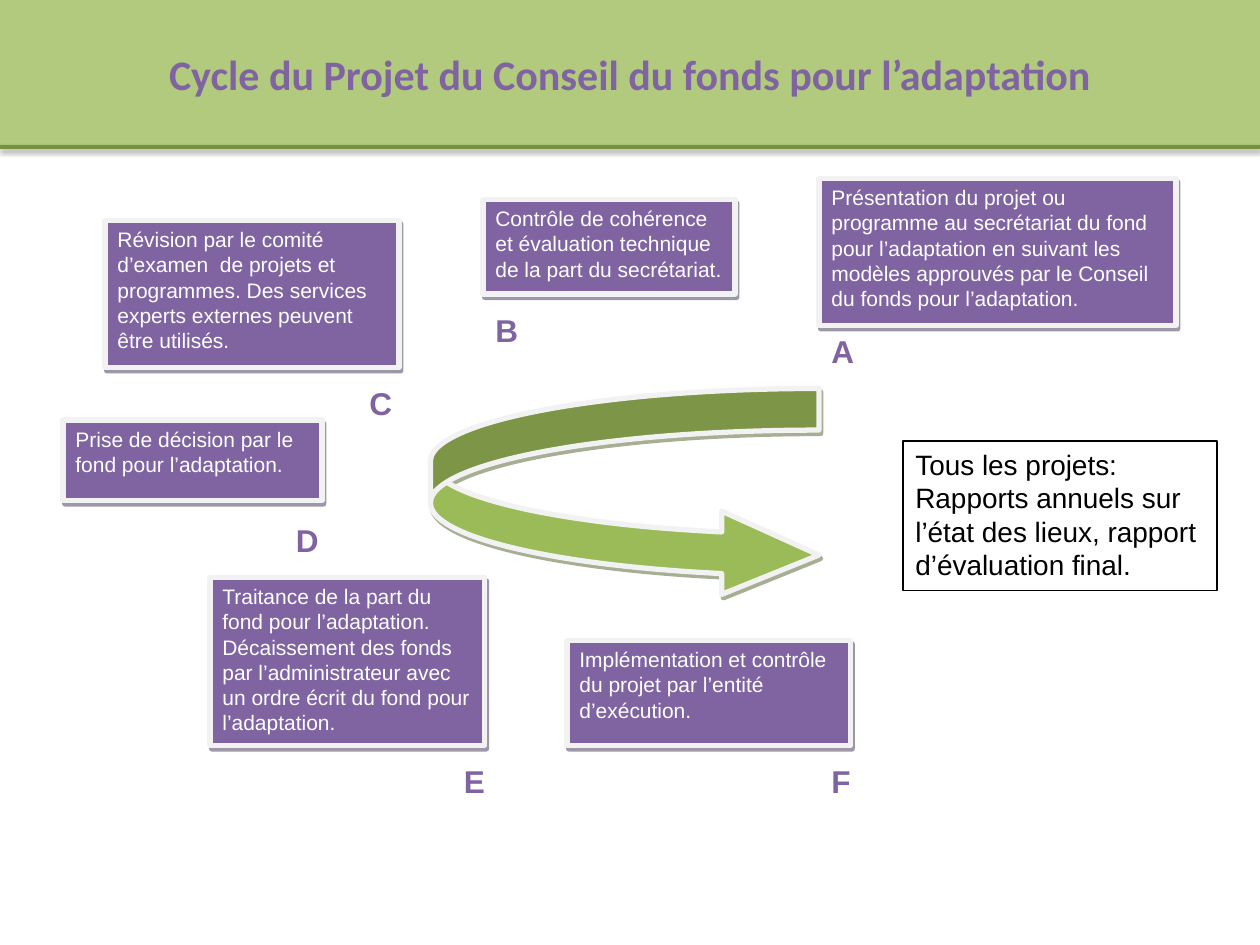
from lxml.etree import SubElement
from pptx import Presentation
from pptx.dml.color import RGBColor
from pptx.enum.shapes import MSO_CONNECTOR as Connector, MSO_SHAPE as Shape
from pptx.enum.text import MSO_ANCHOR as Anchor, MSO_AUTO_SIZE as AutoSize, PP_ALIGN as Align
from pptx.oxml.ns import qn
from pptx.util import Pt

COLORS = {
    "band": "B1CA7E", "rule": "76923C", "purple": "8064A2", "purple_shade": "3F3151",
    "arrow": "9BBB59", "arrow_shade": "4E6128", "edge": "F2F2F2",
    "white": "FFFFFF", "black": "000000",
}
STEPS = [
    ("A", "Présentation du projet ou programme au secrétariat du fond  pour l’adaptation en suivant "
          "les modèles approuvés par le Conseil du fonds pour l’adaptation.",
     (468, 102, 204, 84), (468, 186, 24)),
    ("B", "Contrôle de cohérence et évaluation technique de la part du secrétariat.",
     (276, 114, 144, 54), (276, 174, 18)),
    ("D", "Prise de décision par le fond pour l’adaptation.",
     (36, 240, 148, 46), (162, 294, 24)),
    ("C", "Révision par le comité d’examen  de projets et programmes. Des services experts "
          "externes peuvent être utilisés.",
     (60, 126, 168, 84), (204, 216, 24)),
    ("E", "Traitance de la part du fond pour l’adaptation. Décaissement des fonds par "
          "l’administrateur avec un ordre écrit du fond pour l’adaptation.",
     (120, 330, 157, 96), (258, 432, 30)),
    ("F", "Implémentation et contrôle du projet par l’entité d’exécution.",
     (324, 366, 162, 60), (468, 432, 18)),
]


def rgb(name):
    """Return the palette colour with this name."""
    return RGBColor.from_string(COLORS[name])


def add_shadow(shape, color, opacity, blur, distance, angle):
    """Give a shape an outer shadow."""
    effects = SubElement(shape._element.spPr, qn("a:effectLst"))
    shadow = SubElement(effects, qn("a:outerShdw"), blurRad=str(Pt(blur)), dist=str(Pt(distance)),
                        dir=str(angle * 60000), algn="ctr", rotWithShape="0")
    tint = SubElement(shadow, qn("a:srgbClr"), val=COLORS[color])
    SubElement(tint, qn("a:alpha"), val=str(opacity * 1000))


def write(shape, text, size, color, font="Arial", bold=False, align=Align.LEFT, anchor=Anchor.TOP):
    """Set one paragraph of wrapped text in a shape."""
    frame = shape.text_frame
    frame.word_wrap = True
    frame.vertical_anchor = anchor
    paragraph = frame.paragraphs[0]
    paragraph.text = text
    paragraph.alignment = align
    paragraph.font.name = font
    paragraph.font.size = Pt(size)
    paragraph.font.bold = bold
    paragraph.font.color.rgb = rgb(color)


def add_block(slide, kind, box, fill, edge, width):
    """Add a filled and outlined shape in a box."""
    block = slide.shapes.add_shape(kind, *map(Pt, box))
    block.fill.solid()
    block.fill.fore_color.rgb = rgb(fill)
    block.line.color.rgb = rgb(edge)
    block.line.width = Pt(width)
    return block


def add_header(slide, box):
    """Fill the title band and centre the title in it."""
    title = slide.shapes.title
    title.left, title.top, title.width, title.height = map(Pt, box)
    title.fill.solid()
    title.fill.fore_color.rgb = rgb("band")
    write(title, "Cycle du Projet du Conseil du fonds pour l’adaptation", 24, "purple",
          "Calibri", True, Align.CENTER, Anchor.MIDDLE)


def add_header_rule(slide, box):
    """Draw the rule along the bottom of the title band."""
    left, top, width, height = box
    bottom = top + height
    rule = slide.shapes.add_connector(Connector.STRAIGHT, Pt(left), Pt(bottom),
                                      Pt(left + width), Pt(bottom))
    rule.line.color.rgb = rgb("rule")
    rule.line.width = Pt(2)
    add_shadow(rule, "black", 38, 3.1, 1.6, 90)


def add_cycle_arrow(slide, box):
    """Draw the curved arrow that turns through the steps, within its visible box."""
    left, top, width, height = box
    inset = (width - height) / 2
    arrow = add_block(slide, Shape.CURVED_UP_ARROW, (left + inset, top - inset, height, width),
                      "arrow", "edge", 3)
    for index, value in enumerate((0.2, 0.4, 0.467)):
        arrow.adjustments[index] = value
    arrow.rotation = 270
    transform = arrow._element.spPr.find(qn("a:xfrm"))
    transform.set("flipH", "1")
    transform.set("flipV", "1")
    add_shadow(arrow, "arrow_shade", 50, 0, 2.2, 63)


def add_step(slide, text, box):
    """Add one step of the cycle."""
    step = add_block(slide, Shape.RECTANGLE, box, "purple", "edge", 3)
    add_shadow(step, "purple_shade", 50, 0, 2.2, 63)
    write(step, text, 12, "white")


def add_letter(slide, letter, place):
    """Add the letter of a step."""
    left, top, width = place
    label = slide.shapes.add_textbox(Pt(left), Pt(top), Pt(width), Pt(29))
    write(label, letter, 18, "purple", bold=True)
    label.text_frame.auto_size = AutoSize.SHAPE_TO_FIT_TEXT


def add_reports(slide, box):
    """Add the note on the reports that all projects owe."""
    reports = add_block(slide, Shape.RECTANGLE, box, "white", "black", 0.75)
    reports.shadow.inherit = False
    write(reports, "Tous les projets: Rapports annuels sur l’état des lieux, "
                   "rapport d’évaluation final.", 16, "black")


def main():
    """Build and save the slide."""
    deck = Presentation()
    deck.slide_width, deck.slide_height = Pt(720), Pt(540)
    slide = deck.slides.add_slide(deck.slide_layouts[5])
    header = (0, 0, 720, 84)
    add_header(slide, header)
    add_cycle_arrow(slide, (246, 222, 222, 119))
    for _, text, box, _ in STEPS:
        add_step(slide, text, box)
    add_reports(slide, (516, 252, 179.5, 85.5))
    for letter, _, _, place in sorted(STEPS):
        add_letter(slide, letter, place)
    add_header_rule(slide, header)
    deck.save("out.pptx")


if __name__ == "__main__":
    main()
